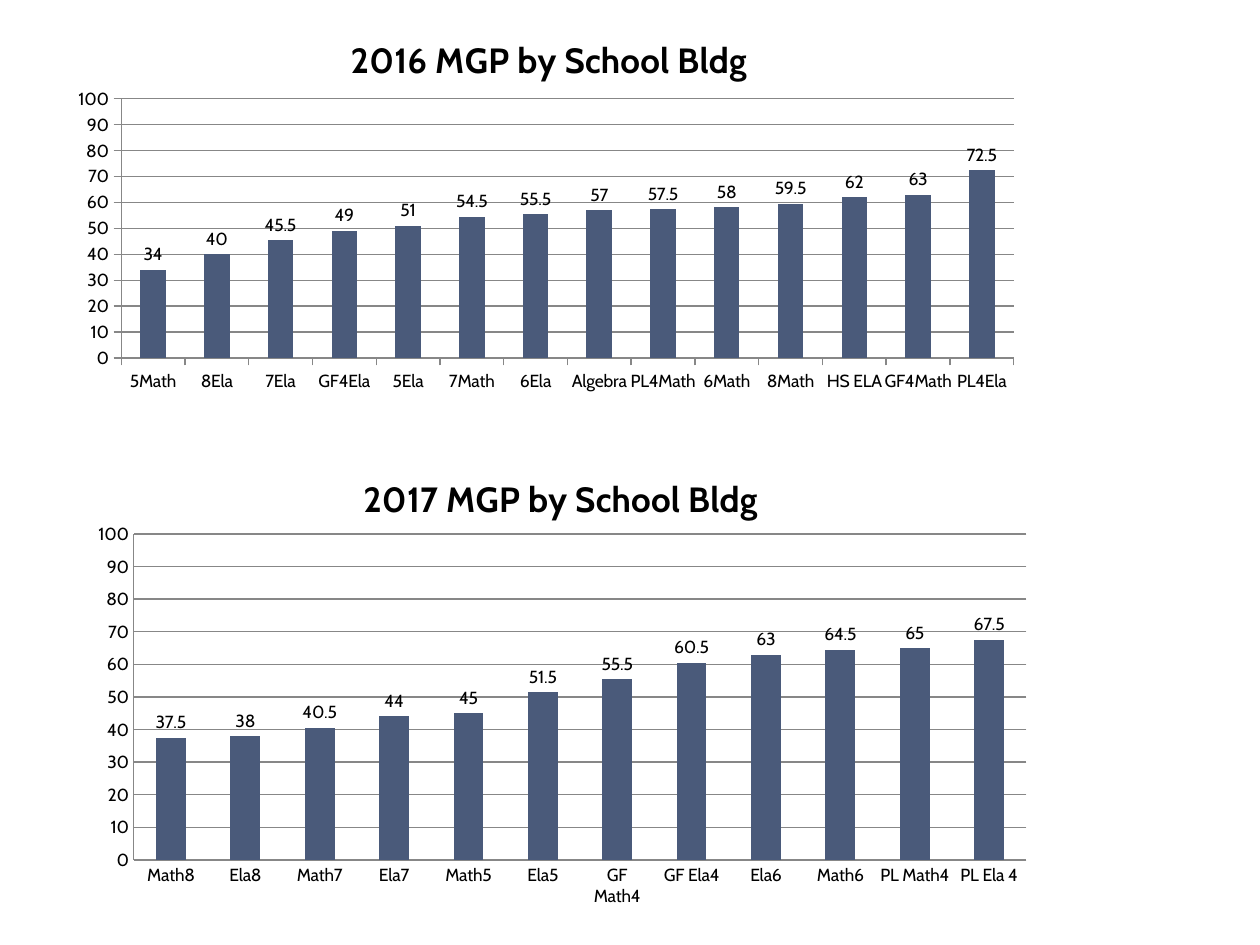
import dataclasses

import pptx
import pptx.chart.data
import pptx.dml.color
import pptx.enum.chart
import pptx.oxml
import pptx.oxml.ns
import pptx.util


@dataclasses.dataclass(frozen=True)
class Theme:
    """Colours, font and type sizes of the slide."""
    bar: str = "4A5A7A"
    rule: str = "878787"
    ink: str = "000000"
    face: str = "Cabin"
    title_size: int = 20
    label_size: int = 10


class GrowthSlide:
    """Draws column charts on one slide, placed by shares of its size."""

    def __init__(self, deck, theme):
        """Add a blank slide to the deck."""
        self.theme = theme
        self.width, self.height = deck.slide_width, deck.slide_height
        self.slide = deck.slides.add_slide(deck.slide_layouts[6])

    def style_font(self, font, size, bold=False):
        """Give a font the theme's face and ink."""
        look = {"name": self.theme.face, "size": pptx.util.Pt(size), "bold": bold}
        for key, value in look.items():
            setattr(font, key, value)
        font.color.rgb = pptx.dml.color.RGBColor.from_string(self.theme.ink)

    def rule(self, line):
        """Draw a line in the theme's grey."""
        line.color.rgb = pptx.dml.color.RGBColor.from_string(self.theme.rule)
        line.width = pptx.util.Pt(0.75)

    def lay_out(self, part, index, shares, inner=False):
        """Place a chart part by shares of the chart's size."""
        for old in part.findall(pptx.oxml.ns.qn("c:layout")):
            part.remove(old)
        target = '<c:layoutTarget val="inner"/>' if inner else ""
        modes = "".join(f'<c:{side}Mode val="edge"/>' for side in "xy")
        sizes = "".join(f'<c:{side} val="{share}"/>' for side, share in shares.items())
        part.insert(index, pptx.oxml.parse_xml(
            f'<c:layout {pptx.oxml.ns.nsdecls("c")}><c:manualLayout>'
            f"{target}{modes}{sizes}</c:manualLayout></c:layout>"))

    def axis(self, axis, settings):
        """Apply format values to an axis and rule its line."""
        for key, value in settings.items():
            setattr(axis, key, value)
        self.rule(axis.format.line)
        self.style_font(axis.tick_labels.font, self.theme.label_size)

    def columns(self, title, scores, frame, plot_shares, tick):
        """Add a titled column chart of scores by class."""
        data = pptx.chart.data.CategoryChartData()
        data.categories = list(scores)
        data.add_series("Series 1", list(scores.values()))
        left, top, width, height = frame
        chart = self.slide.shapes.add_chart(
            pptx.enum.chart.XL_CHART_TYPE.COLUMN_CLUSTERED,
            int(left * self.width), int(top * self.height),
            int(width * self.width), int(height * self.height), data).chart
        chart.has_legend = False
        self.style_font(chart.font, self.theme.label_size)

        heading = chart.chart_title.text_frame
        heading.text = title
        self.style_font(heading.paragraphs[0].runs[0].font, self.theme.title_size, True)
        chart.chart_title.include_in_layout = False

        ticks = {"major_tick_mark": tick,
                 "minor_tick_mark": pptx.enum.chart.XL_TICK_MARK.NONE}
        self.axis(chart.category_axis, ticks)
        self.axis(chart.value_axis, ticks | {
            "minimum_scale": 0, "maximum_scale": 100, "major_unit": 10,
            "has_major_gridlines": True})
        self.rule(chart.value_axis.major_gridlines.format.line)

        plot = chart.plots[0]
        for key, value in {"gap_width": 150, "vary_by_categories": False,
                           "has_data_labels": True}.items():
            setattr(plot, key, value)
        fill = plot.series[0].format.fill
        fill.solid()
        fill.fore_color.rgb = pptx.dml.color.RGBColor.from_string(self.theme.bar)
        for key, value in {
                "show_value": True, "number_format": "General",
                "number_format_is_linked": False,
                "position": pptx.enum.chart.XL_LABEL_POSITION.OUTSIDE_END}.items():
            setattr(plot.data_labels, key, value)
        self.style_font(plot.data_labels.font, self.theme.label_size)

        root = chart.element
        self.lay_out(root.find(".//" + pptx.oxml.ns.qn("c:title")), 1,
                     {"x": 0.29, "y": 0.05})
        self.lay_out(root.find(".//" + pptx.oxml.ns.qn("c:plotArea")), 0,
                     dict(zip("xywh", plot_shares)), inner=True)


def main():
    """Build the slide with both years of scores."""
    deck = pptx.Presentation()
    deck.slide_width, deck.slide_height = pptx.util.Inches(10), pptx.util.Inches(7.5)
    growth = GrowthSlide(deck, Theme())
    scores_2016 = {
        "5Math": 34, "8Ela": 40, "7Ela": 45.5, "GF4Ela": 49, "5Ela": 51,
        "7Math": 54.5, "6Ela": 55.5, "Algebra": 57, "PL4Math": 57.5, "6Math": 58,
        "8Math": 59.5, "HS ELA": 62, "GF4Math": 63, "PL4Ela": 72.5}
    scores_2017 = {
        "Math8": 37.5, "Ela8": 38, "Math7": 40.5, "Ela7": 44, "Math5": 45,
        "Ela5": 51.5, "GF Math4": 55.5, "GF Ela4": 60.5, "Ela6": 63,
        "Math6": 64.5, "PL Math4": 65, "PL Ela 4": 67.5}
    marks = pptx.enum.chart.XL_TICK_MARK
    growth.columns("2016 MGP by School Bldg", scores_2016,
                   (0.05, 0.01, 0.77, 0.41), (0.06, 0.23, 0.92, 0.67), marks.OUTSIDE)
    growth.columns("2017 MGP by School Bldg", scores_2017,
                   (0.06, 0.47, 0.77, 0.5), (0.06, 0.19, 0.92, 0.69), marks.NONE)
    deck.save("out.pptx")


if __name__ == "__main__":
    main()
